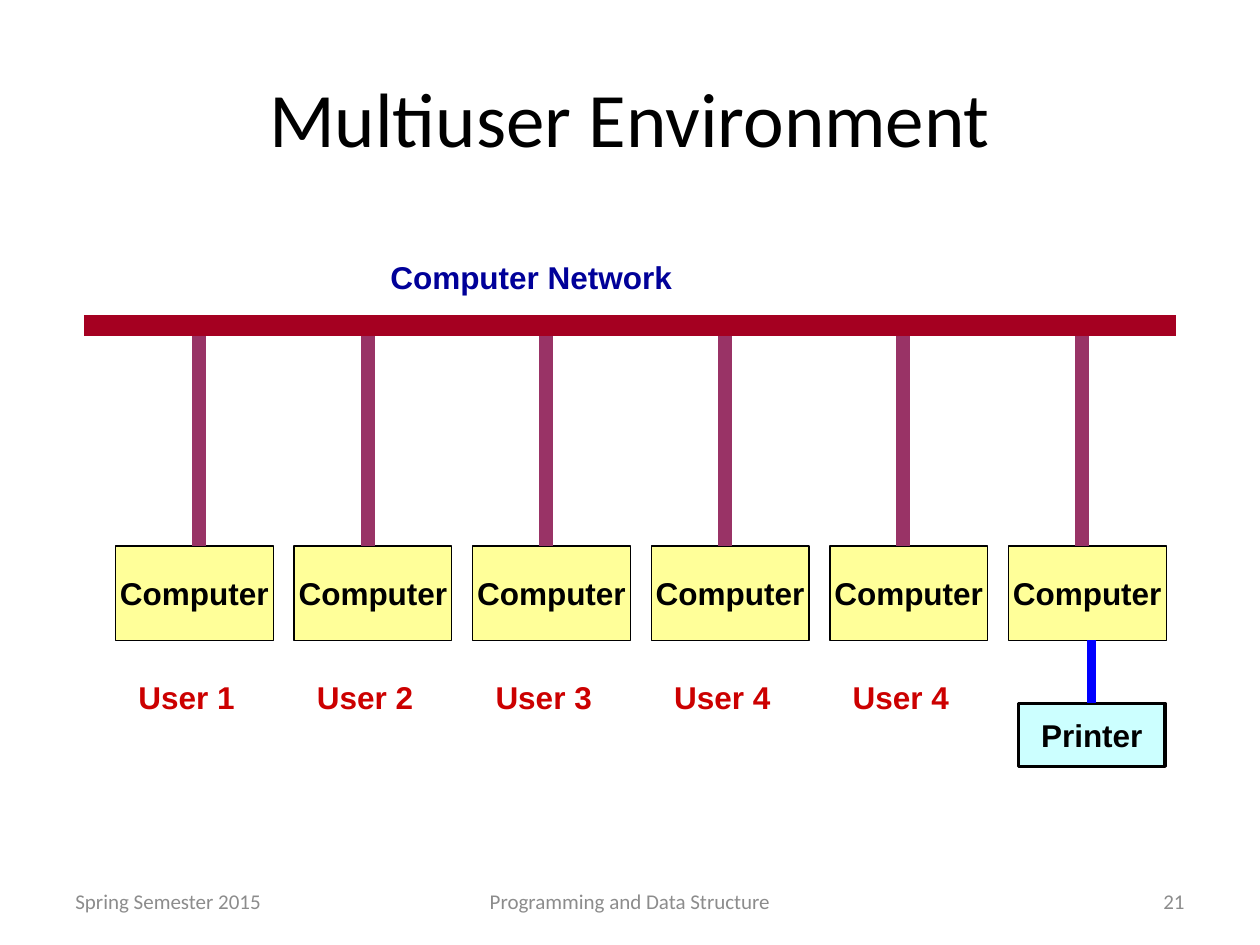
from lxml.etree import SubElement
from pptx import Presentation
from pptx.dml.color import RGBColor
from pptx.enum.shapes import MSO_CONNECTOR, MSO_SHAPE
from pptx.enum.text import MSO_ANCHOR, MSO_AUTO_SIZE, PP_ALIGN
from pptx.oxml.ns import qn
from pptx.util import Cm, Pt

BLACK = RGBColor(0x00, 0x00, 0x00)
GREY = RGBColor(0x8C, 0x8C, 0x8C)
YELLOW = RGBColor(0xFF, 0xFF, 0x99)
CYAN = RGBColor(0xCC, 0xFF, 0xFF)
CRIMSON = RGBColor(0xA5, 0x00, 0x21)
PLUM = RGBColor(0x99, 0x33, 0x66)
BLUE = RGBColor(0x00, 0x00, 0xFF)
NAVY = RGBColor(0x00, 0x00, 0x99)
RED = RGBColor(0xCC, 0x00, 0x00)

deck = Presentation()
deck.slide_width, deck.slide_height = Cm(25.4), Cm(19.05)
page = deck.slides.add_slide(deck.slide_layouts[6])


def write(box, text, color, align, frame_format, font_format):
    frame = box.text_frame
    for name, value in frame_format.items():
        setattr(frame, name, value)
    para = frame.paragraphs[0]
    para.alignment = align
    span = para.add_run()
    span.text = text
    span.font.color.rgb = color
    for name, value in font_format.items():
        setattr(span.font, name, value)


def draw_line(x1, y1, x2, y2, color, width):
    line = page.shapes.add_connector(
        MSO_CONNECTOR.STRAIGHT, Cm(x1), Cm(y1), Cm(x2), Cm(y2)
    )
    line.line.color.rgb = color
    line.line.width = Pt(width)
    SubElement(line._element.spPr, qn("a:effectLst"))
    return line


centred = {"word_wrap": True, "vertical_anchor": MSO_ANCHOR.MIDDLE}
unwrapped = {"word_wrap": False, "vertical_anchor": MSO_ANCHOR.MIDDLE}
growing = {"word_wrap": True, "auto_size": MSO_AUTO_SIZE.SHAPE_TO_FIT_TEXT}
title_font = {"name": "Calibri", "size": Pt(44)}
footer_font = {"name": "Calibri", "size": Pt(12)}
label_font = {"name": "Arial", "size": Pt(18), "bold": True}

for left, top, width, height, text, color, align, font in [
    (1.27, 0.76, 22.86, 3.18, "Multiuser Environment", BLACK, PP_ALIGN.CENTER, title_font),
    (1.27, 17.66, 5.93, 1.01, "Spring Semester 2015", GREY, PP_ALIGN.LEFT, footer_font),
    (8.68, 17.66, 8.04, 1.01, "Programming and Data Structure", GREY, PP_ALIGN.CENTER, footer_font),
    (18.2, 17.66, 5.93, 1.01, "21", GREY, PP_ALIGN.RIGHT, footer_font),
]:
    box = page.shapes.add_textbox(Cm(left), Cm(top), Cm(width), Cm(height))
    write(box, text, color, align, centred, font)

pitch = 3.6
machines = [
    (2.33 + pitch * i, 11.01, 3.18, 1.9, "Computer", YELLOW, 0.75) for i in range(6)
]
machines.append((20.53, 14.18, 2.96, 1.27, "Printer", CYAN, 2))
for left, top, width, height, text, fill, border in machines:
    box = page.shapes.add_shape(
        MSO_SHAPE.RECTANGLE, Cm(left), Cm(top), Cm(width), Cm(height)
    )
    box.shadow.inherit = False
    box.fill.solid()
    box.fill.fore_color.rgb = fill
    box.line.color.rgb = BLACK
    box.line.width = Pt(border)
    write(box, text, BLACK, PP_ALIGN.CENTER, unwrapped, label_font)
printer = box

draw_line(1.69, 6.56, 23.71, 6.56, CRIMSON, 12)
for x in [4.02] + [3.81 + pitch * i for i in range(1, 6)]:
    draw_line(x, 6.77, x, 11.01, PLUM, 8)
cable = draw_line(22.01, 12.91, 22.01, 14.18, BLUE, 5)
cable.end_connect(printer, 0)

labels = [
    (2.54 + pitch * i, 13.55, 3.81, f"User {number}", RED)
    for i, number in enumerate([1, 2, 3, 4, 4])
]
labels.append((7.62, 5.08, 9.1, "Computer Network", NAVY))
for left, top, width, text, color in labels:
    box = page.shapes.add_textbox(Cm(left), Cm(top), Cm(width), Cm(1.27))
    write(box, text, color, PP_ALIGN.LEFT, growing, label_font)

deck.save("out.pptx")
